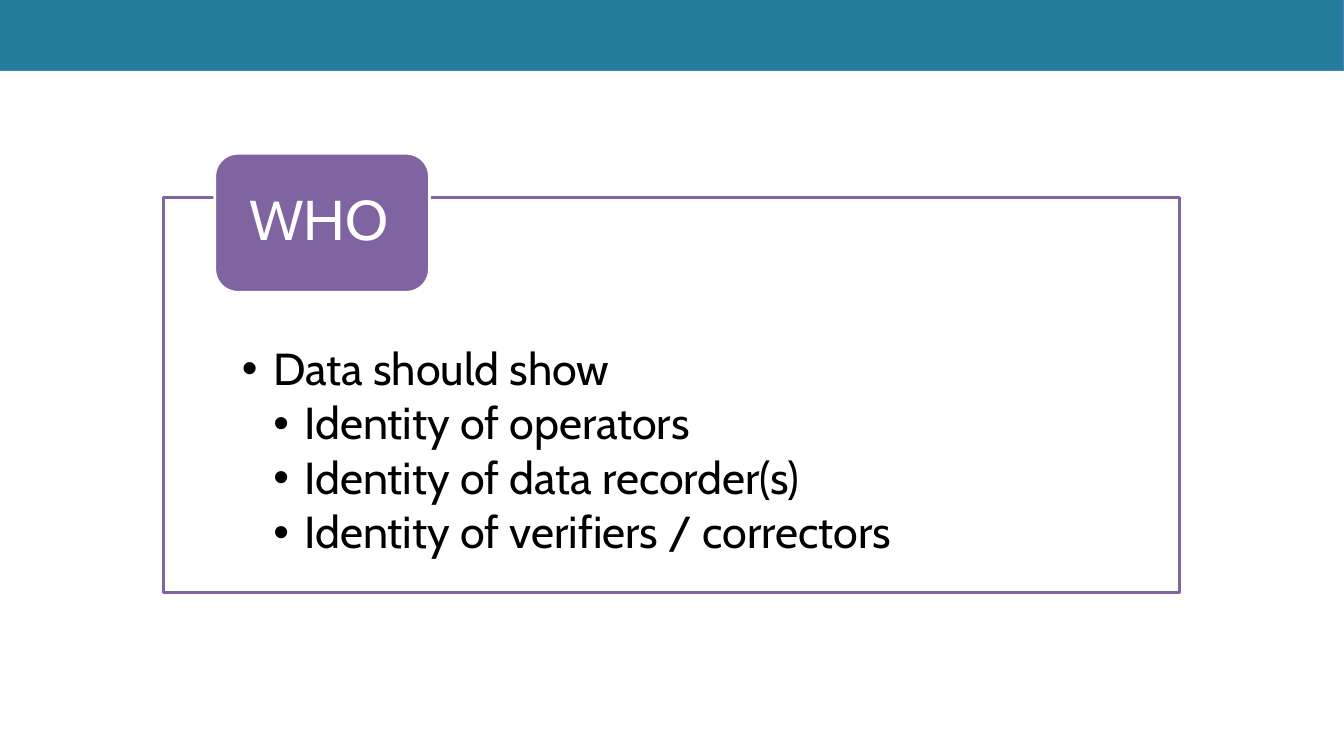
from lxml import etree
from pptx import Presentation
from pptx.dml.color import RGBColor
from pptx.enum.shapes import MSO_SHAPE
from pptx.enum.text import MSO_ANCHOR, MSO_AUTO_SIZE, PP_ALIGN
from pptx.oxml.ns import qn
from pptx.util import Inches, Pt

RECTANGLE = MSO_SHAPE.RECTANGLE
ROUNDED = MSO_SHAPE.ROUNDED_RECTANGLE
TOP, MIDDLE = MSO_ANCHOR.TOP, MSO_ANCHOR.MIDDLE

COLORS = {
    "banner": "237C9A",
    "banner_line": "4B7EBC",
    "purple": "8064A2",
    "white": "FFFFFF",
    "black": "000000",
}
FONT = "Cabin"
BULLET_STEP = 0.31
TITLE_LAYOUT = 1

HEADING = "WHO"
POINTS = [
    ("Data should show", 0),
    ("Identity of operators", 1),
    ("Identity of data recorder(s)", 1),
    ("Identity of verifiers / correctors", 1),
]


def color(name):
    return RGBColor.from_string(COLORS[name])


def place(shape, box):
    shape.left, shape.top, shape.width, shape.height = map(Inches, box)


def add_box(slide, kind, box, fill, line, line_width):
    shape = slide.shapes.add_shape(kind, *map(Inches, box))
    shape.shadow.inherit = False
    shape.fill.solid()
    shape.fill.fore_color.rgb = color(fill)
    shape.line.color.rgb = color(line)
    shape.line.width = Pt(line_width)
    return shape


def set_opacity(shape, percent):
    srgb = shape.element.spPr.find(qn("a:solidFill")).find(qn("a:srgbClr"))
    etree.SubElement(srgb, qn("a:alpha"), val=str(percent * 1000))


def bring_to_front(shape):
    shape.element.getparent().append(shape.element)


def set_frame(shape, margins, anchor):
    frame = shape.text_frame
    frame.word_wrap = True
    frame.auto_size = MSO_AUTO_SIZE.NONE
    frame.vertical_anchor = anchor
    (frame.margin_left, frame.margin_top,
     frame.margin_right, frame.margin_bottom) = map(Inches, margins)
    return frame


def add_bullet(paragraph, level):
    paragraph.level = level
    properties = paragraph._p.get_or_add_pPr()
    properties.set("marL", str(Inches(BULLET_STEP * (level + 1))))
    properties.set("indent", str(-Inches(BULLET_STEP)))
    etree.SubElement(properties, qn("a:buFont"), typeface="Arial")
    etree.SubElement(properties, qn("a:buChar"), char="•")


def write(paragraph, text, *, size, font_color, level=None, space_after=0):
    if level is not None:
        add_bullet(paragraph, level)
    paragraph.alignment = PP_ALIGN.LEFT
    paragraph.line_spacing = 0.9
    paragraph.space_before = Pt(0)
    paragraph.space_after = Pt(space_after)
    run = paragraph.add_run()
    run.text = text
    run.font.name = FONT
    run.font.size = Pt(size)
    run.font.color.rgb = color(font_color)


def add_banner(slide, box):
    add_box(slide, RECTANGLE, box, "banner", "banner_line", 0.75)


def add_points_panel(slide, box, points):
    panel = add_box(slide, RECTANGLE, box, "white", "purple", 2)
    set_opacity(panel, 90)
    body = slide.placeholders[1]
    place(body, box)
    bring_to_front(body)
    frame = set_frame(body, (0.78, 1.48, 0.78, 0.25), TOP)
    for index, (text, level) in enumerate(points):
        paragraph = frame.add_paragraph() if index else frame.paragraphs[0]
        write(paragraph, text, size=32, font_color="black",
              level=level, space_after=4.3)


def add_heading_tab(slide, box, text):
    left, top, width, height = box
    inset = 0.07
    add_box(slide, ROUNDED, box, "purple", "white", 2)
    title = slide.shapes.title
    place(title, (left + inset, top + inset,
                  width - 2 * inset, height - 2 * inset))
    bring_to_front(title)
    frame = set_frame(title, (0.27, 0, 0.27, 0), MIDDLE)
    write(frame.paragraphs[0], text, size=40, font_color="white")


def main():
    presentation = Presentation()
    presentation.slide_width = Inches(13.33)
    presentation.slide_height = Inches(7.5)
    slide = presentation.slides.add_slide(
        presentation.slide_layouts[TITLE_LAYOUT])
    add_banner(slide, (0, 0, 13.33, 0.7))
    add_points_panel(slide, (1.62, 1.96, 10.08, 3.92), POINTS)
    add_heading_tab(slide, (2.13, 1.52, 2.13, 1.38), HEADING)
    presentation.save("out.pptx")


if __name__ == "__main__":
    main()
